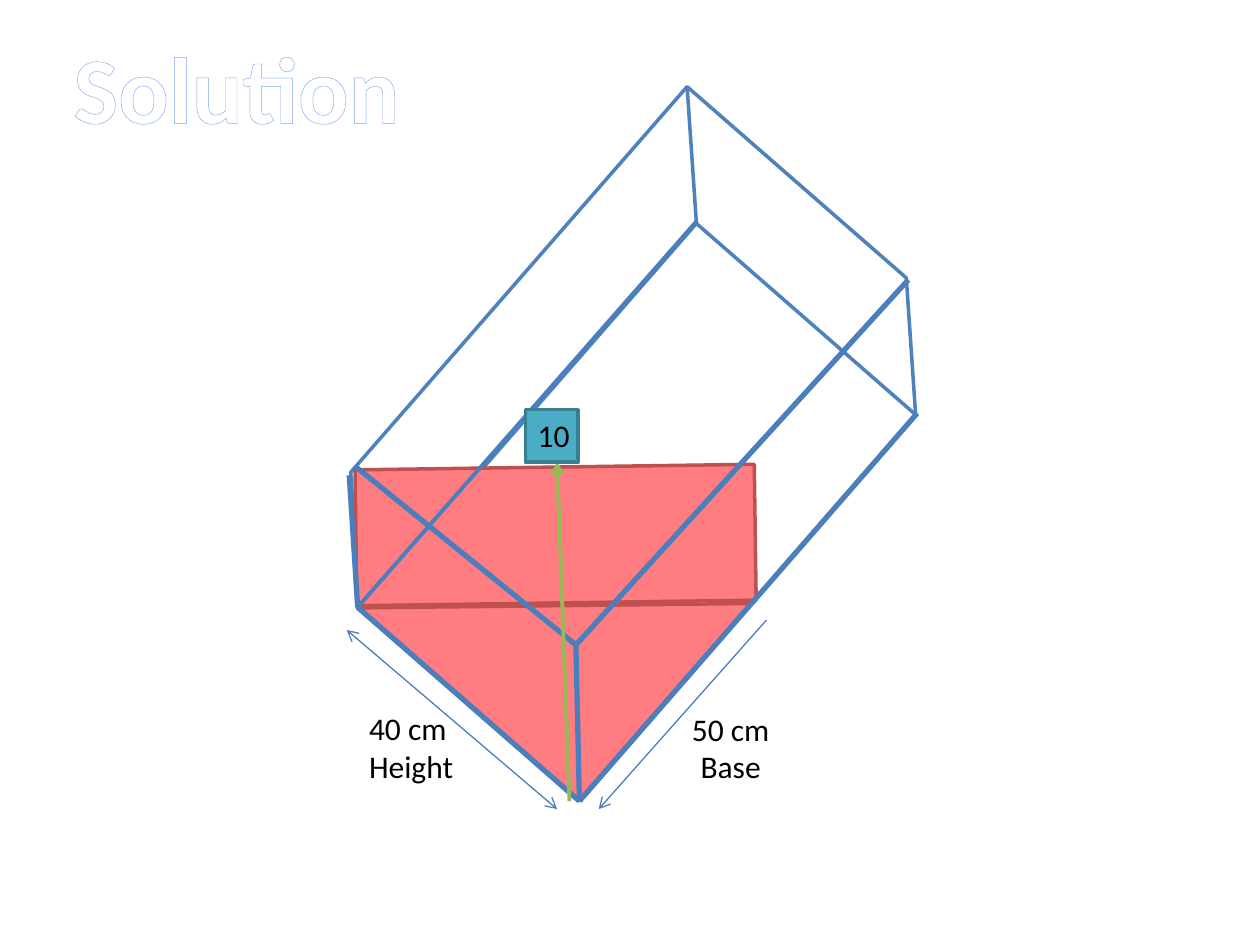
from lxml import etree
from pptx import Presentation
from pptx import util as u
from pptx.dml.color import RGBColor
from pptx.enum import shapes, text
from pptx.oxml import ns

HUES = {
    "white": "FFFFFF", "black": "000000", "glow": "7EA6EA",
    "cube": "4F81BD", "edge": "4B7EBC", "water": "FF7C80",
    "rim": "C0504D", "depth": "98B955", "tag": "4BACC6", "frame": "377F92",
}
KIND = shapes.MSO_SHAPE
ALIGN = text.PP_ALIGN


def hue(name):
    return RGBColor.from_string(HUES[name])


def place(box, x, y):
    return u.Cm(box[0] + x), u.Cm(box[1] + y)


def write(frame, words, size=18, color="black", bold=False, align=ALIGN.LEFT, wrap=True):
    frame.word_wrap = wrap
    frame.vertical_anchor = text.MSO_ANCHOR.TOP
    frame.text = words
    for para in frame.paragraphs:
        para.alignment = align
        for run in para.runs:
            font = run.font
            font.name, font.size, font.bold = "Calibri", u.Pt(size), bold
            font.color.rgb = hue(color)


def label(slide, box, x, y, wide, high, words, **style):
    item = slide.shapes.add_textbox(*place(box, x, y), u.Cm(wide), u.Cm(high))
    write(item.text_frame, words, **style)


def solid(slide, box, kind, x, y, wide, high, line, fill=None, turn=0):
    item = slide.shapes.add_shape(kind, *place(box, x, y), u.Cm(wide), u.Cm(high))
    item.shadow.inherit = False
    item.rotation = turn
    if fill:
        item.fill.solid()
        item.fill.fore_color.rgb = hue(fill)
    else:
        item.fill.background()
    item.line.color.rgb = hue(line)
    item.line.width = u.Pt(2)


def stroke(slide, box, start, end, width, color="edge", tips=(), tip="arrow"):
    item = slide.shapes.add_connector(
        shapes.MSO_CONNECTOR.STRAIGHT, *place(box, *start), *place(box, *end))
    item.line.color.rgb = hue(color)
    item.line.width = u.Pt(width)
    for name in tips:
        etree.SubElement(item.line._get_or_add_ln(), ns.qn(f"a:{name}"), type=tip)
    etree.SubElement(item._element.spPr, ns.qn("a:effectLst"))


def title(slide, box):
    item = slide.shapes.title
    item.left, item.top, item.width, item.height = (u.Cm(n) for n in box)
    write(item.text_frame, "Solution", size=54, color="white", bold=True,
          align=ALIGN.CENTER, wrap=False)
    props = item.text_frame.paragraphs[0].runs[0].font._element
    line = etree.Element(ns.qn("a:ln"), w=str(u.Pt(2.48)))
    paint = etree.SubElement(line, ns.qn("a:solidFill"))
    etree.SubElement(paint, ns.qn("a:srgbClr"), val=HUES["glow"])
    props.insert(0, line)


def tank(slide, box):
    solid(slide, box, KIND.CUBE, -0.37, 3.28, 12.27, 7.82, "cube", turn=311.1)
    solid(slide, box, KIND.RIGHT_TRIANGLE, 1.53, 7.5, 5.28, 5.92, "rim", "water", 311.1)
    solid(slide, box, KIND.RECTANGLE, 2.83, 5.01, 2.74, 8.05, "rim", "water", 269.2)
    back, left, right = (7.05, 2.7), (0.21, 10.49), (11.31, 3.89)
    front, base, far = (4.61, 11.25), (4.68, 14.4), (11.49, 6.58)
    rim, side = (0.16, 7.65), (0.04, 7.83)
    stroke(slide, box, back, left, 2.25)
    for start, end in ((right, front), (front, base), (front, rim),
                       (base, left), (side, left), (base, far)):
        stroke(slide, box, start, end, 3)


def height(slide, box):
    stroke(slide, box, (0, 0), (4.24, 3.61), 0.75, tips=("headEnd", "tailEnd"))
    label(slide, box, 0.2, 1.47, 2.34, 1.8, "40 cm\nHeight")


def base(slide, box):
    label(slide, box, 1.07, 1.68, 3.18, 1.8, "50 cm\nBase", align=ALIGN.CENTER)
    stroke(slide, box, (3.38, 0), (0, 3.81), 0.75, tips=("tailEnd",))


def depth(slide, box):
    stroke(slide, box, (0.89, 7.89), (0.64, 1.06), 2.25, "depth", ("tailEnd",))
    solid(slide, box, KIND.RECTANGLE, 0, 0, 1.06, 1.06, "frame", "tag")
    label(slide, box, 0, 0, 1.27, 1.02, "10")


def main():
    deck = Presentation()
    deck.slide_width, deck.slide_height = u.Cm(25.4), u.Cm(19.05)
    slide = deck.slides.add_slide(deck.slide_layouts[5])
    tank(slide, (7, 1.75))
    height(slide, (6.99, 12.7))
    base(slide, (12.07, 12.5))
    depth(slide, (10.59, 8.26))
    title(slide, (1.19, 0.46, 7.16, 2.57))
    deck.save("out.pptx")


if __name__ == "__main__":
    main()
